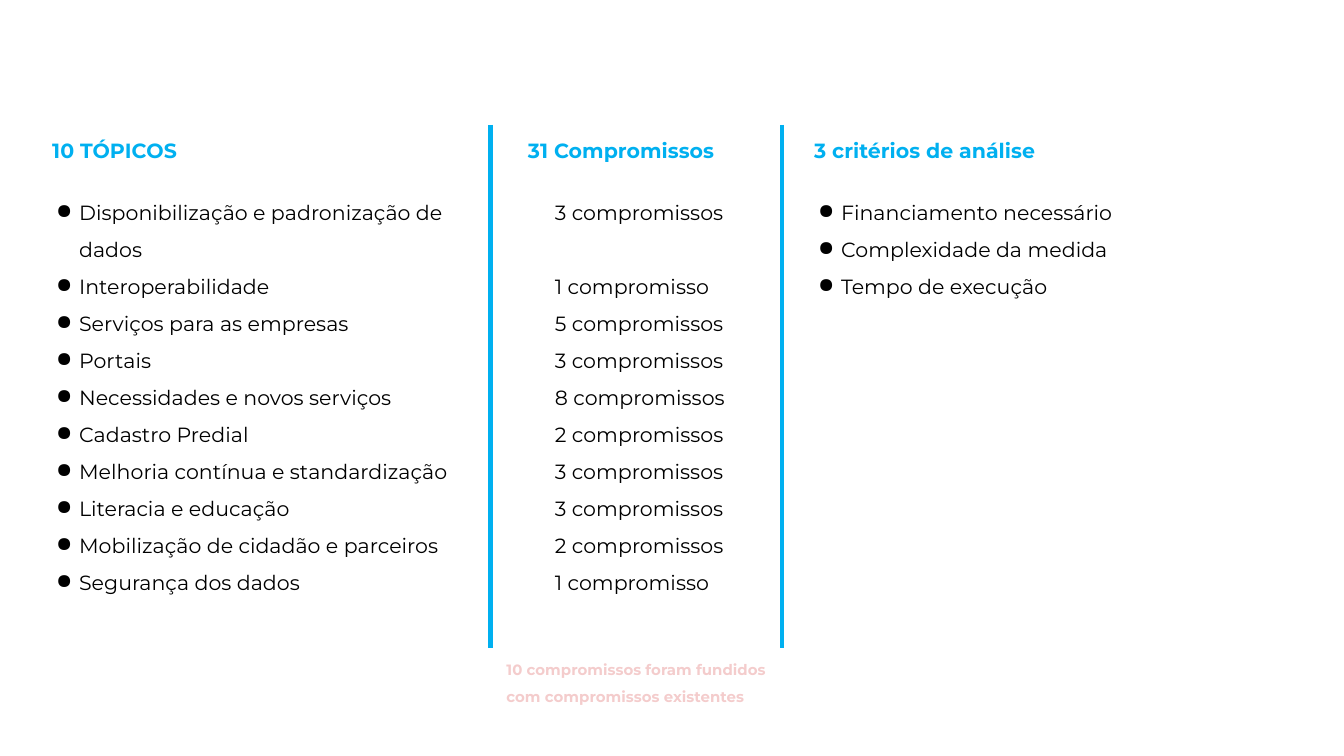
from dataclasses import dataclass

from lxml import etree
from pptx import Presentation
from pptx import util as u
from pptx.dml.color import RGBColor
from pptx.enum import shapes, text
from pptx.oxml.ns import qn


@dataclass(frozen=True)
class Theme:
    font: str = "Montserrat"
    accent: str = "00B0F0"
    ink: str = "000000"
    note: str = "F4CCCC"
    body_size: float = 11
    note_size: float = 8
    rule_width: float = 2.25
    line_spacing: float = 1.5
    heading_gap: float = 13.2
    wrapped_line: float = 19.8


class SlideBuilder:
    def __init__(self, page, theme):
        self.page = page
        self.theme = theme

    def text_box(self, left, top, width, height):
        box = self.page.shapes.add_textbox(*map(u.Inches, (left, top, width, height)))
        frame = box.text_frame
        frame.word_wrap = True
        frame.auto_size = text.MSO_AUTO_SIZE.SHAPE_TO_FIT_TEXT
        frame.margin_left = frame.margin_right = u.Inches(0.1)
        frame.margin_top = frame.margin_bottom = u.Inches(0.1)
        return frame

    def style(self, para, size, color, bold=False):
        for span in para.runs:
            span.font.name = self.theme.font
            span.font.size = u.Pt(size)
            span.font.bold = bold
            span.font.color.rgb = RGBColor.from_string(color)

    def indent(self, para, bulleted):
        """Indent the text, hanging a round bullet in front if asked."""
        props = para._p.get_or_add_pPr()
        props.set("marL", str(u.Inches(0.2)))
        props.set("indent", str(u.Inches(-0.17 if bulleted else 0)))
        if bulleted:
            color = etree.SubElement(props, qn("a:buClr"))
            etree.SubElement(color, qn("a:srgbClr"), val=self.theme.ink)
            etree.SubElement(props, qn("a:buChar"), char="●")

    def column(self, left, top, width, height, heading, items, bulleted=True):
        theme = self.theme
        frame = self.text_box(left, top, width, height)
        frame.text = "\n".join([heading, *items])
        title, *entries = frame.paragraphs
        title.space_after = u.Pt(theme.heading_gap)
        self.style(title, theme.body_size, theme.accent, bold=True)
        for para in entries:
            para.line_spacing = theme.line_spacing
            self.indent(para, bulleted)
            self.style(para, theme.body_size, theme.ink)
        return entries

    def divider(self, x, top, bottom):
        line = self.page.shapes.add_connector(
            shapes.MSO_CONNECTOR.STRAIGHT, *map(u.Inches, (x, top, x, bottom)))
        line.line.color.rgb = RGBColor.from_string(self.theme.accent)
        line.line.width = u.Pt(self.theme.rule_width)
        etree.SubElement(line._element.spPr, qn("a:effectLst"))

    def note(self, left, top, width, height, wording):
        frame = self.text_box(left, top, width, height)
        frame.text = wording
        para = frame.paragraphs[0]
        para.line_spacing = self.theme.line_spacing
        self.style(para, self.theme.note_size, self.theme.note, bold=True)


TOPICS = [
    ("Disponibilização e padronização de dados", 3),
    ("Interoperabilidade", 1),
    ("Serviços para as empresas", 5),
    ("Portais", 3),
    ("Necessidades e novos serviços", 8),
    ("Cadastro Predial", 2),
    ("Melhoria contínua e standardização", 3),
    ("Literacia e educação", 3),
    ("Mobilização de cidadão e parceiros", 2),
    ("Segurança dos dados", 1),
]
CRITERIA = ["Financiamento necessário", "Complexidade da medida", "Tempo de execução"]
TOP = 0.93


def main():
    deck = Presentation()
    deck.slide_width = u.Inches(10)
    deck.slide_height = u.Inches(10 * 9 / 16)
    theme = Theme()
    blank_layout = deck.slide_layouts[6]
    slide = SlideBuilder(deck.slides.add_slide(blank_layout), theme)

    names = [name for name, _ in TOPICS]
    counts = [f"{count} compromisso{'s' if count > 1 else ''}" for _, count in TOPICS]
    slide.column(0.29, TOP, 3.38, 3.54, "10 TÓPICOS", names)
    commitments = slide.column(3.83, TOP, 1.82, 3.54, "31 Compromissos", counts,
                               bulleted=False)
    # The first topic takes two lines, so its count leaves one line free.
    commitments[0].space_after = u.Pt(theme.wrapped_line)
    for x in (3.65, 5.82):
        slide.divider(x, TOP, 4.82)
    slide.column(5.96, TOP, 2.6, 1.31, "3 critérios de análise", CRITERIA)
    slide.note(3.67, 4.75, 2.16, 0.54,
               "10 compromissos foram fundidos com compromissos existentes")
    deck.save("out.pptx")


if __name__ == "__main__":
    main()
